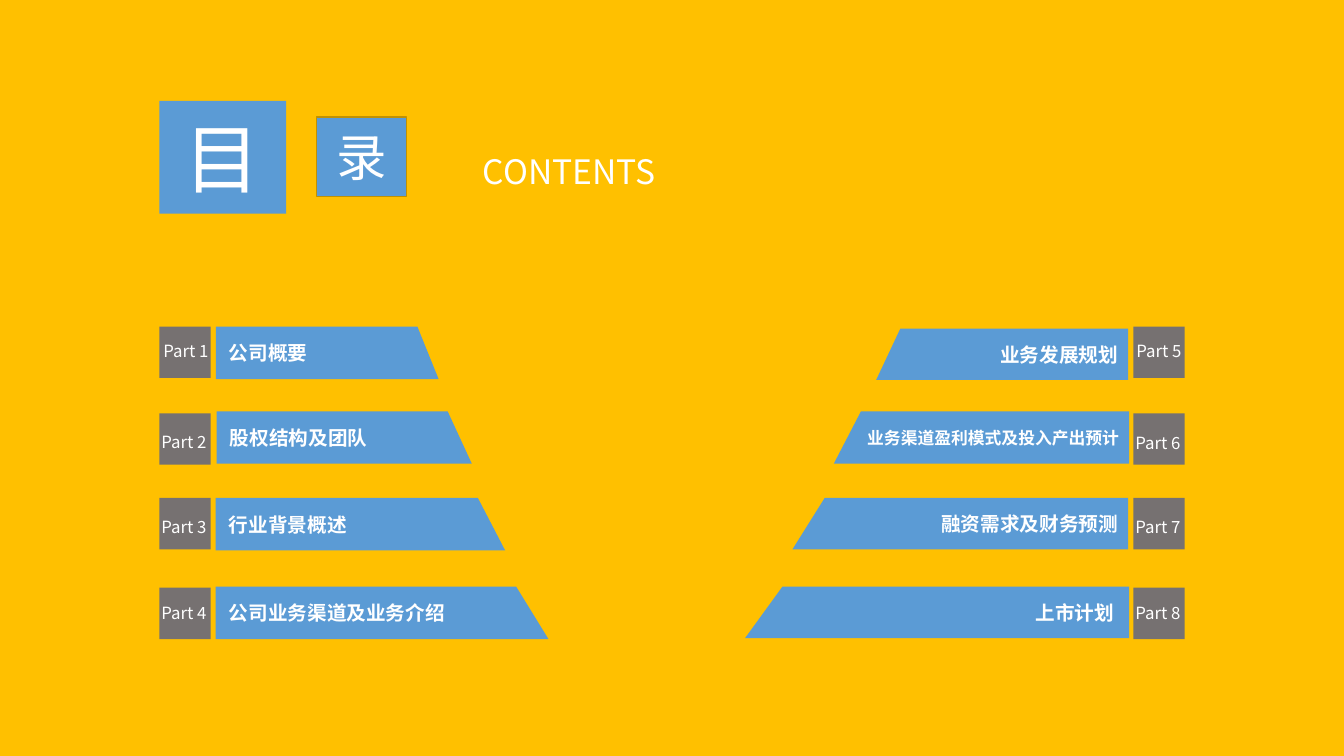
from pptx import Presentation
from pptx.dml.color import RGBColor
from pptx.enum.text import MSO_ANCHOR as Anchor, PP_ALIGN as Align
from pptx.enum.shapes import MSO_SHAPE as Shape
from pptx.util import Pt

PX = 9144  # 100 px to the inch
FONT = "Noto Sans CJK SC"
YELLOW, BLUE, GREY, WHITE, BRONZE = "FFC000", "5B9BD5", "767171", "FFFFFF", "C09102"
TILE = 51

# tile top, label inset, label drop, bar top, bar height, bar base edge,
# bar top length, bar bottom length, text, size, text inset
LEFT_PARTS = [
    (324, 4, 0, 324, 52, 214, 200, 221, "公司概要", 14, 13),
    (410, 2, 4, 408, 52, 215, 229, 253, "股权结构及团队", 14, 13),
    (494, 2, 4, 494, 52, 214, 260, 287, "行业背景概述", 14, 13),
    (583, 2, 1, 582, 52, 214, 298, 330, "公司业务渠道及业务介绍", 14, 13),
]
RIGHT_PARTS = [
    (324, 3, 0, 326, 51, 1119, 226, 250, "业务发展规划", 14, 10),
    (410, 2, 5, 408, 52, 1120, 266, 293, "业务渠道盈利模式及投入产出预计", 12, 10),
    (494, 2, 4, 494, 51, 1119, 301, 333, "融资需求及财务预测", 14, 10),
    (583, 2, 1, 582, 51, 1120, 344, 381, "上市计划", 14, 15),
]


def color(value):
    return RGBColor.from_string(value)


def paint(shape, fill, line=None):
    shape.shadow.inherit = False
    shape.fill.solid()
    shape.fill.fore_color.rgb = color(fill)
    if line:
        shape.line.color.rgb = color(line)
        shape.line.width = Pt(1)
    else:
        shape.line.fill.background()


def write(shape, text, size, align=Align.LEFT, bold=False, margins=(0, 0, 0, 0), wrap=False):
    frame = shape.text_frame
    frame.word_wrap = wrap
    frame.vertical_anchor = Anchor.MIDDLE
    (frame.margin_left, frame.margin_top,
     frame.margin_right, frame.margin_bottom) = [side * PX for side in margins]
    para = frame.paragraphs[0]
    para.text = text
    para.alignment = align
    para.font.name = FONT
    para.font.size = Pt(size)
    para.font.bold = bold
    para.font.color.rgb = color(WHITE)


def add_square(page, left, top, width, height, fill, line=None):
    square = page.shapes.add_shape(
        Shape.RECTANGLE, left * PX, top * PX, width * PX, height * PX)
    paint(square, fill, line)
    return square


def add_heading(page, left, top):
    big = add_square(page, left, top, 126, 112, BLUE)
    write(big, "目", 54, Align.CENTER)
    small = add_square(page, left + 156, top + 16, 89, 79, BLUE, BRONZE)
    write(small, "录", 36, Align.CENTER)

    title = page.shapes.title
    title.left, title.top = (left + 311) * PX, (top + 45) * PX
    title.width, title.height = 201 * PX, 50 * PX
    write(title, "CONTENTS", 24, margins=(10, 5, 10, 5))


def add_bar(page, base, top, height, top_length, bottom_length, facing):
    """Trapezoid with an upright edge at base, reaching right (1) or left (-1)."""
    builder = page.shapes.build_freeform(base, top, scale=PX)
    builder.add_line_segments([
        (base + facing * top_length, top),
        (base + facing * bottom_length, top + height),
        (base, top + height),
    ])
    bar = builder.convert_to_shape()
    paint(bar, BLUE)
    return bar


def add_parts(page, tile_left, parts, first_number, facing):
    for number, part in enumerate(parts, first_number):
        (tile_top, label_inset, drop, bar_top, height, base,
         top_length, bottom_length, text, size, inset) = part

        # Numbered tile
        tile = add_square(page, tile_left, tile_top, TILE, TILE, GREY)
        write(tile, f"Part {number}", 12, margins=(label_inset, 2 * drop, 0, 0))
        tile.text_frame.paragraphs[0].line_spacing = 0.9

        # Slanted bar with the part's name
        bar = add_bar(page, base, bar_top, height, top_length, bottom_length, facing)
        if facing > 0:
            write(bar, text, size, Align.LEFT, True, (inset, 0, 10, 0), True)
        else:
            write(bar, text, size, Align.RIGHT, True, (0, 0, inset, 0), True)


def main():
    deck = Presentation()
    deck.slide_width, deck.slide_height = 1333 * PX, 750 * PX
    page = deck.slides.add_slide(deck.slide_layouts[5])
    page.background.fill.solid()
    page.background.fill.fore_color.rgb = color(YELLOW)

    add_heading(page, 158, 100)
    add_parts(page, 158, LEFT_PARTS, 1, 1)
    add_parts(page, 1124, RIGHT_PARTS, 5, -1)
    deck.save("out.pptx")


if __name__ == "__main__":
    main()
